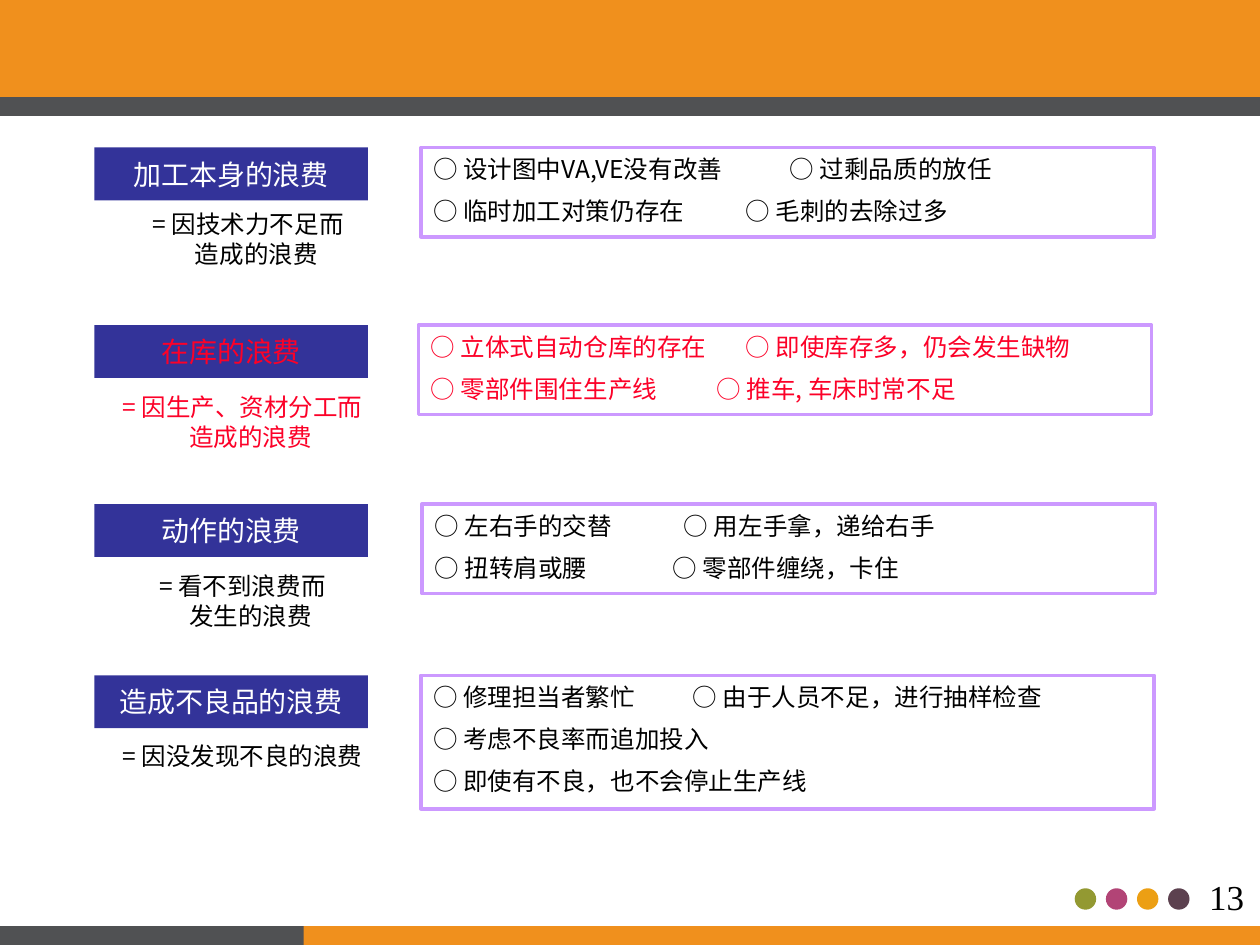
from lxml import etree
from pptx import Presentation
from pptx.dml.color import RGBColor
from pptx.enum.shapes import MSO_SHAPE
from pptx.enum.text import MSO_ANCHOR, PP_ALIGN
from pptx.oxml.ns import qn
from pptx.util import Inches, Pt

RECT, OVAL = MSO_SHAPE.RECTANGLE, MSO_SHAPE.OVAL
LEFT, CENTER = PP_ALIGN.LEFT, PP_ALIGN.CENTER
TOP, MIDDLE = MSO_ANCHOR.TOP, MSO_ANCHOR.MIDDLE

# Content: each example line is (first item, second item, tab stop in inches)
WASTES = [
    {"name": "加工本身的浪费", "caption": ["= 因技术力不足而", "造成的浪费"],
     "top": 1.17, "caption_gap": 0.44, "caption_width": 2.26, "left": 3.34,
     "examples": [("设计图中VA,VE没有改善", "过剩品质的放任", 2.83),
                  ("临时加工对策仍存在", "毛刺的去除过多", 2.48)]},
    {"name": "在库的浪费", "caption": ["= 因生产、资材分工而", "造成的浪费"],
     "top": 2.58, "caption_gap": 0.48, "caption_width": 2.17, "left": 3.32,
     "examples": [("立体式自动仓库的存在", "即使库存多，仍会发生缺物", 2.5),
                  ("零部件围住生产线", "推车, 车床时常不足", 2.27)],
     "highlight": True},
    {"name": "动作的浪费", "caption": ["= 看不到浪费而", "发生的浪费"],
     "top": 4, "caption_gap": 0.48, "caption_width": 2.17, "left": 3.35,
     "examples": [("左右手的交替", "用左手拿，递给右手", 1.98),
                  ("扭转肩或腰", "零部件缠绕，卡住", 1.89)]},
    {"name": "造成不良品的浪费", "caption": ["= 因没发现不良的浪费"],
     "top": 5.36, "caption_gap": 0.47, "caption_width": 2.17, "left": 3.34,
     "examples": [("修理担当者繁忙", "由于人员不足，进行抽样检查", 2.06),
                  ("考虑不良率而追加投入", None, None),
                  ("即使有不良，也不会停止生产线", None, None)]},
]
PAGE_NUMBER = "13"

THEME = {
    "font": "Noto Sans CJK SC", "number_font": "Times New Roman",
    "name_size": 16, "body_size": 14, "number_size": 20,
    "line_pitch": 17, "example_gap": 7, "caption_indent": 0.13,
    "orange": "F0901D", "gray": "505153", "navy": "333399", "lilac": "CC99FF",
    "red": "FC0128", "white": "FFFFFF", "black": "000000",
    "dots": ["939932", "B24476", "EC9F14", "5C414F"],
}
BANDS = [
    (0, 0, 10, 0.77, "orange"),
    (0, 0.77, 10, 0.15, "gray"),
    (1.95, 7.35, 8.05, 0.15, "orange"),
    (0, 7.35, 2.41, 0.15, "gray"),
]


def add_box(slide, kind, left, top, width, height, fill=None, line=None):
    box = slide.shapes.add_shape(kind, Inches(left), Inches(top),
                                 Inches(width), Inches(height))
    box.shadow.inherit = False
    if fill:
        box.fill.solid()
        box.fill.fore_color.rgb = RGBColor.from_string(fill)
    else:
        box.fill.background()
    if line:
        box.line.color.rgb = RGBColor.from_string(line)
        box.line.width = Pt(2)
    else:
        box.line.fill.background()
    return box


def write(box, lines, *, size, color, font=THEME["font"], align=LEFT,
          anchor=TOP, wrap=True, pitch=None, gap=0, tabs=(), later_indent=0,
          side_inset=0.1):
    frame = box.text_frame
    frame.word_wrap = wrap
    frame.vertical_anchor = anchor
    frame.margin_left = frame.margin_right = Inches(side_inset)
    for index, line in enumerate(lines):
        paragraph = frame.add_paragraph() if index else frame.paragraphs[0]
        props = paragraph._p.get_or_add_pPr()
        if index < len(tabs) and tabs[index]:
            stops = etree.SubElement(props, qn("a:tabLst"))
            etree.SubElement(stops, qn("a:tab"), algn="l",
                             pos=str(Inches(tabs[index])))
        paragraph.alignment = align
        if pitch:
            paragraph.line_spacing = Pt(pitch)
        if index:
            paragraph.space_before = Pt(gap)
            props.set("marL", str(Inches(later_indent)))
        run = paragraph.add_run()
        run.text = line
        run.font.size = Pt(size)
        run.font.color.rgb = RGBColor.from_string(color)
        run.font.name = font
        etree.SubElement(run._r.get_or_add_rPr(), qn("a:ea"), typeface=font)


def add_frame(slide):
    # Dots, bands and page number
    for index, color in enumerate(THEME["dots"]):
        add_box(slide, OVAL, 8.53 + index * 0.247, 7.05, 0.17, 0.17, fill=color)
    for left, top, width, height, color in BANDS:
        add_box(slide, RECT, left, top, width, height, fill=THEME[color])
    number = slide.shapes.add_textbox(Inches(9.47), Inches(6.9),
                                      Inches(0.53), Inches(0.44))
    write(number, [PAGE_NUMBER], size=THEME["number_size"], color=THEME["black"],
          font=THEME["number_font"], align=CENTER, wrap=False)


def add_waste(slide, waste):
    top = waste["top"]
    highlight = waste.get("highlight")
    body_color = THEME["red" if highlight else "black"]
    body = {"size": THEME["body_size"], "color": body_color,
            "pitch": THEME["line_pitch"]}

    # Name
    name = add_box(slide, RECT, 0.75, top, 2.17, 0.42, fill=THEME["navy"])
    write(name, [waste["name"]], size=THEME["name_size"],
          color=THEME["red" if highlight else "white"],
          align=CENTER, anchor=MIDDLE, wrap=False)

    # Examples in the outlined box
    examples = waste["examples"]
    lines = ["\t".join(f"○ {item}" for item in (first, second) if item)
             for first, second, _ in examples]
    panel = add_box(slide, RECT, waste["left"], top, 5.82,
                    0.71 + 0.35 * (len(lines) - 2), line=THEME["lilac"])
    write(panel, lines, tabs=[stop for _, _, stop in examples],
          gap=THEME["example_gap"], **body)

    # Caption under the name
    caption = slide.shapes.add_textbox(
        Inches(0.84), Inches(top + waste["caption_gap"]),
        Inches(waste["caption_width"]), Inches(0.57))
    write(caption, waste["caption"], align=CENTER, side_inset=0,
          later_indent=THEME["caption_indent"], **body)


def main():
    deck = Presentation()
    deck.slide_width, deck.slide_height = Inches(10), Inches(7.5)
    slide = deck.slides.add_slide(deck.slide_layouts[6])
    add_frame(slide)
    for waste in WASTES:
        add_waste(slide, waste)
    deck.save("out.pptx")


if __name__ == "__main__":
    main()
